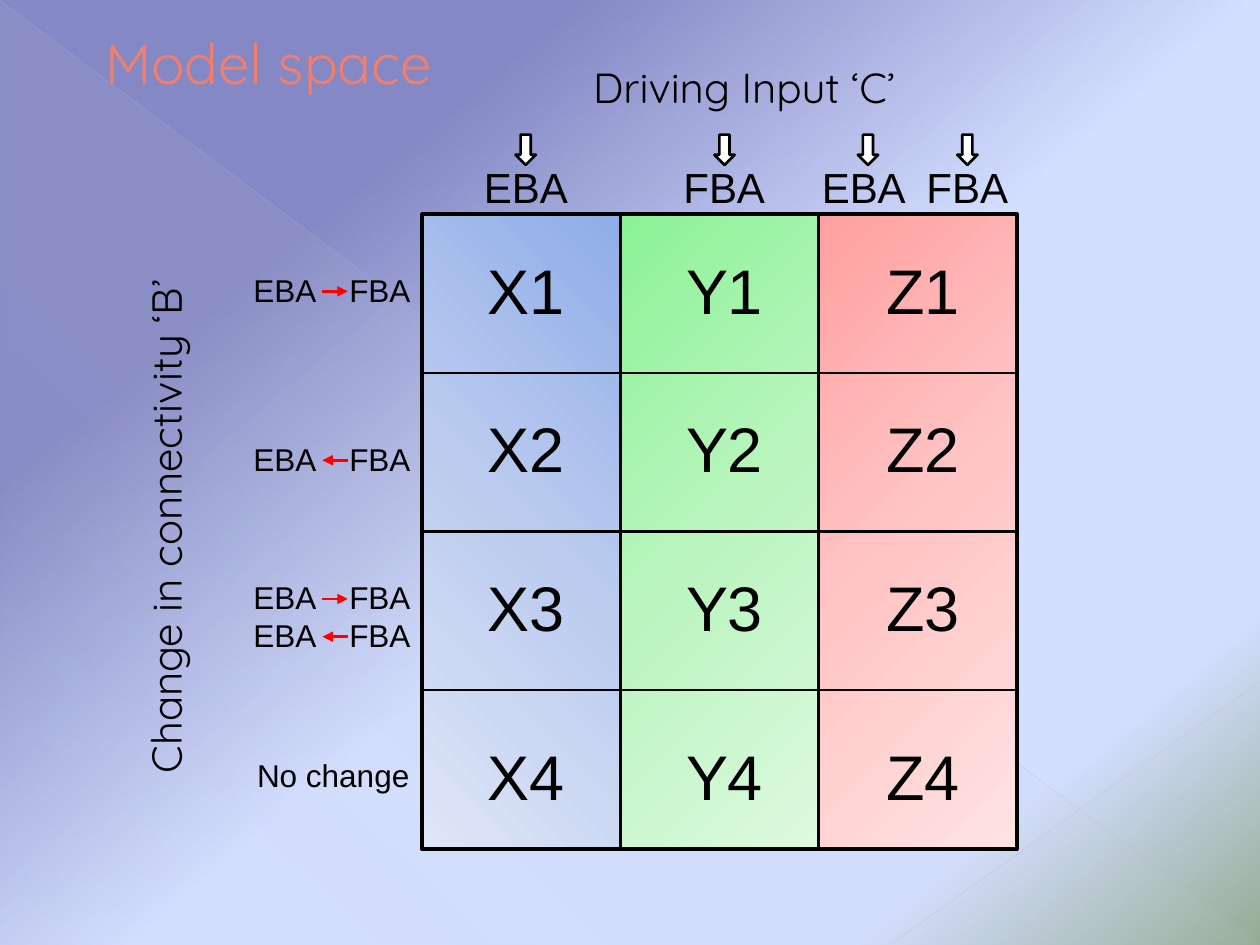
from dataclasses import dataclass
from lxml import etree
from pptx import Presentation
from pptx.dml.color import RGBColor
from pptx.enum.shapes import MSO_CONNECTOR, MSO_SHAPE
from pptx.enum.text import MSO_AUTO_SIZE, PP_ALIGN
from pptx.oxml.ns import qn
from pptx.slide import Slide
from pptx.util import Pt

STRAIGHT = MSO_CONNECTOR.STRAIGHT
RECTANGLE = MSO_SHAPE.RECTANGLE
DOWN_ARROW = MSO_SHAPE.DOWN_ARROW
RIGHT_TRIANGLE = MSO_SHAPE.RIGHT_TRIANGLE
GROW = MSO_AUTO_SIZE.SHAPE_TO_FIT_TEXT
CENTER = PP_ALIGN.CENTER
LEFT = PP_ALIGN.LEFT

COLORS = {
    "ink": "000000", "white": "FFFFFF", "title": "F37F6B", "change": "FF0000",
    "veil": "C5D1D7", "diagonal": "BABECD", "corner": "C2C5D2",
    "dusk": "8488C4", "sky": "D4DEFF", "moss": "96AB94",
    "x_dark": "8FADE9", "x_mid": "BCCCEF", "x_light": "DEE6F7",
    "y_dark": "8CF296", "y_mid": "BAF5BF", "y_light": "DEF9E0",
    "z_dark": "FFA0A0", "z_mid": "FFC5C5", "z_light": "FFE3E3",
}


def format_text(frame, text, size=24, font="Arial", color="ink", align=CENTER, tab=None):
    frame.word_wrap = True
    frame.auto_size = GROW
    paragraph = frame.paragraphs[0]
    paragraph.alignment = align
    run = paragraph.add_run()
    run.text = text
    run.font.size = Pt(size)
    run.font.name = font
    run.font.color.rgb = RGBColor.from_string(COLORS[color])
    if tab:
        tabs = etree.SubElement(paragraph._p.get_or_add_pPr(), qn("a:tabLst"))
        etree.SubElement(tabs, qn("a:tab"), pos=str(Pt(tab)), algn="l")


def add_alpha(color_element, opacity):
    etree.SubElement(color_element, qn("a:alpha"), val=str(opacity * 1000))


@dataclass
class Board:
    slide: Slide
    outline: str = "ink"

    def gradient(self, fill, owner, stops, angle):
        fill.gradient()
        fill.gradient_angle = 360 - angle
        stop_list = next(owner.iter(qn("a:gsLst")))
        for old_stop in list(stop_list):
            stop_list.remove(old_stop)
        for position, color, opacity in stops:
            stop = etree.SubElement(stop_list, qn("a:gs"), pos=str(position * 1000))
            shade = etree.SubElement(stop, qn("a:srgbClr"), val=COLORS[color])
            if opacity < 100:
                add_alpha(shade, opacity)

    def background(self, stops, angle):
        self.gradient(self.slide.background.fill, self.slide._element, stops, angle)

    def text(self, text, left, top, width, height, rotation=0, **style):
        box = self.slide.shapes.add_textbox(Pt(left), Pt(top), Pt(width), Pt(height))
        box.rotation = rotation
        format_text(box.text_frame, text, **style)

    def shape(self, kind, left, top, width, height, line=None, fill=None, stops=None, angle=45):
        shape = self.slide.shapes.add_shape(kind, Pt(left), Pt(top), Pt(width), Pt(height))
        shape.shadow.inherit = False
        if stops:
            self.gradient(shape.fill, shape._element, stops, angle)
        elif fill:
            shape.fill.solid()
            shape.fill.fore_color.rgb = RGBColor.from_string(COLORS[fill])
        else:
            shape.fill.background()
        if line:
            shape.line.width = Pt(line)
            shape.line.color.rgb = RGBColor.from_string(COLORS[self.outline])
        else:
            shape.line.fill.background()

    def line(self, x1, y1, x2, y2, color, width, opacity=100, arrow=False):
        line = self.slide.shapes.add_connector(STRAIGHT, Pt(x1), Pt(y1), Pt(x2), Pt(y2))
        line.line.width = Pt(width)
        line.line.color.rgb = RGBColor.from_string(COLORS[color])
        properties = line._element.spPr
        if opacity < 100:
            add_alpha(next(properties.iter(qn("a:srgbClr"))), opacity)
        if arrow:
            etree.SubElement(properties.find(qn("a:ln")), qn("a:tailEnd"), type="triangle")
        etree.SubElement(properties, qn("a:effectLst"))


def main():
    presentation = Presentation()
    presentation.slide_width, presentation.slide_height = Pt(720), Pt(540)
    board = Board(presentation.slides.add_slide(presentation.slide_layouts[6]))

    board.background([(24, "dusk", 100), (53, "sky", 100), (83, "sky", 100), (100, "moss", 100)], 50)
    veil = [(0, "veil", 10), (70, "veil", 8), (100, "veil", 1)]
    board.shape(RIGHT_TRIANGLE, 0.5, 1.2, 718.8, 538.5, stops=veil, angle=133)
    board.line(0, 0.5, 719.5, 539.5, "diagonal", 0.39, opacity=35)
    board.line(720, 389.5, 509, 539.5, "corner", 0.47, opacity=45)

    board.text("Model space", 53, 13, 300, 42, size=32, font="Quicksand", color="title", align=LEFT)
    board.text("Driving Input ‘C’", 308.9, 31.8, 232.6, 36, font="Quicksand")
    board.text("Change in connectivity ‘B’", -84.2, 282.8, 357.1, 36, rotation=270, font="Quicksand")

    grid_left, grid_top, column_width, row_height = 241.2, 122.4, 113.3, 90.7
    label_tops = [139.9, 230.4, 321.1, 417.6]
    for column, (letter, angle) in enumerate([("X", 135), ("Y", 45), ("Z", 45)]):
        left = grid_left + column * column_width
        tone = letter.lower()
        stops = [(0, f"{tone}_dark", 100), (50, f"{tone}_mid", 100), (100, f"{tone}_light", 100)]
        board.shape(RECTANGLE, left, grid_top, column_width, 4 * row_height, line=2, stops=stops, angle=angle)
        for row, label_top in enumerate(label_tops):
            board.text(f"{letter}{row + 1}", left + 17, label_top, 85, 51, size=36)
            board.shape(RECTANGLE, left, grid_top + row * row_height, column_width, row_height, line=1.25)

    for region, left in [("EBA", 235.4), ("FBA", 348.7)]:
        board.text(region, left, 88.6, 130.3, 36)
    board.text("EBA\tFBA", 462.5, 88.6, 130.3, 36, align=LEFT, tab=59.8)
    for input_center in (300.4, 414, 496, 552.8):
        board.shape(DOWN_ARROW, input_center - 5.8, 77, 11.6, 17.3, line=1.5, fill="white")

    arrow_left, arrow_right = 184.3, 198.7
    for top, forward in [(151.2, True), (247.7, False), (326.9, True), (348.5, False)]:
        board.text("EBA\tFBA", 137.7, top, 110, 28.8, size=18, align=LEFT, tab=54.8)
        start, end = (arrow_left, arrow_right) if forward else (arrow_right, arrow_left)
        board.line(start, top + 15.3, end, top + 15.3, "change", 1.5, arrow=True)
    board.text("No change", 134.6, 428.4, 111.6, 28.8, size=18)

    presentation.save("out.pptx")


if __name__ == "__main__":
    main()
